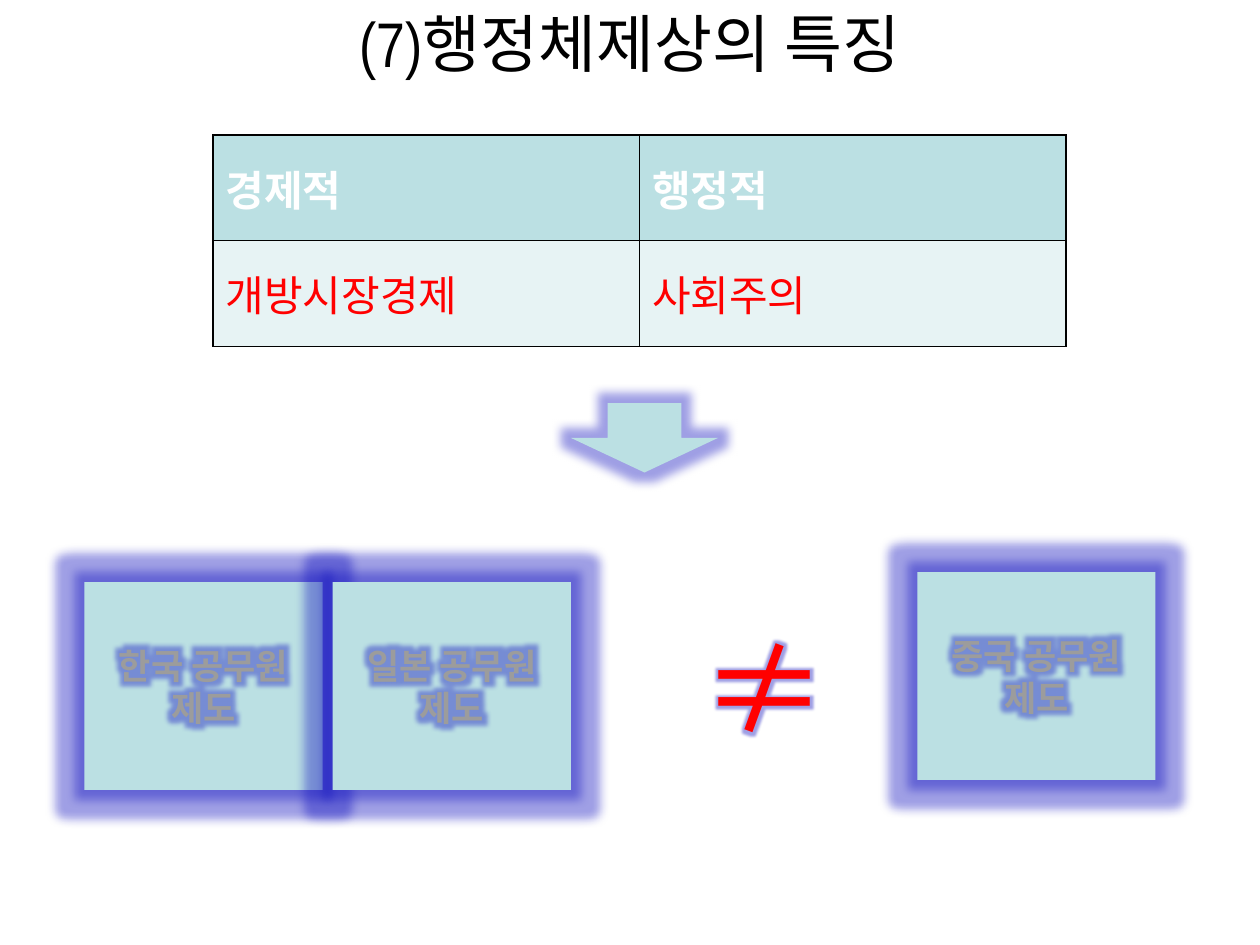
from dataclasses import dataclass

from lxml import etree
from pptx import Presentation
from pptx import util as u
from pptx.dml.color import RGBColor
from pptx.enum import shapes, text
from pptx.oxml import ns

SANS = "Noto Sans CJK KR"
PALE, RED, YELLOW, BLACK = "BBE0E3", "FF0000", "FFFF00", "000000"
GLOW = "0F0FBE"


@dataclass
class SystemBox:
    label: str
    left: float
    top: float


SYSTEMS = [
    SystemBox("한국 공무원 제도", 0.67, 4.62),
    SystemBox("일본 공무원 제도", 2.64, 4.62),
    SystemBox("중국 공무원 제도", 7.28, 4.54),
]
HEADINGS = ["경제적", "행정적"]
FEATURES = ["개방시장경제", "사회주의"]


def rgb(value: str) -> RGBColor:
    return RGBColor.from_string(value)


def child(parent, tag: str, **attributes):
    return etree.SubElement(parent, ns.qn(tag), attributes)


def add_solid(parent, color: str):
    return child(child(parent, "a:solidFill"), "a:srgbClr", val=color)


def add_line(parent, tag: str, color: str, points: float):
    line = child(parent, tag, w=str(int(u.Pt(points))))
    add_solid(line, color)
    return line


def glow_effect(parent, points: float):
    effects = child(parent, "a:effectLst")
    color = child(child(effects, "a:glow", rad=str(int(u.Pt(points)))), "a:srgbClr", val=GLOW)
    child(color, "a:alpha", val="40000")
    return effects


def write(frame, content: str, size: float, color: str, bold=False, font=SANS,
          align=None, outline=None, glow=0.0) -> None:
    frame.vertical_anchor = text.MSO_ANCHOR.MIDDLE
    paragraph = frame.paragraphs[0]
    paragraph.alignment = align
    run = paragraph.add_run()
    run.text = content
    for name, value in {"size": u.Pt(size), "bold": bold, "name": font}.items():
        setattr(run.font, name, value)
    run.font.color.rgb = rgb(color)
    properties = run.font._element
    child(properties, "a:ea", typeface=SANS)
    if outline:
        properties.insert(0, add_line(properties, "a:ln", *outline))
    if glow:
        fill = properties.find(ns.qn("a:solidFill"))
        fill.addnext(glow_effect(properties, glow))


def add_block(slide, preset, left: float, top: float, width: float, height: float):
    block = slide.shapes.add_shape(preset, *map(u.Inches, (left, top, width, height)))
    block.fill.solid()
    block.fill.fore_color.rgb = rgb(PALE)
    block.line.fill.background()
    glow_effect(block._element.spPr, 11)
    return block


def add_title(slide) -> None:
    title = slide.shapes.title
    place = {"left": 0, "top": 0, "width": 10, "height": 0.67}
    for name, value in place.items():
        setattr(title, name, u.Inches(value))
    write(title.text_frame, "(7)행정체제상의 특징", 36, BLACK, font="Arial Narrow",
          align=text.PP_ALIGN.CENTER)


def format_cell(cell, fill: str) -> None:
    cell.vertical_anchor = text.MSO_ANCHOR.MIDDLE
    properties = cell._tc.get_or_add_tcPr()
    for side in ("a:lnL", "a:lnR", "a:lnT", "a:lnB"):
        add_line(properties, side, BLACK, 1)
    cell.fill.solid()
    cell.fill.fore_color.rgb = rgb(fill)


def add_features(slide) -> None:
    place = map(u.Inches, (1.69, 1.07, 6.77, 1.68))
    table = slide.shapes.add_table(2, len(HEADINGS), *place).table
    for column, (heading, feature) in enumerate(zip(HEADINGS, FEATURES)):
        head, body = table.cell(0, column), table.cell(1, column)
        format_cell(head, PALE)
        format_cell(body, "E7F3F4")
        write(head.text_frame, heading, 24, "FFFFFF", bold=True)
        outline = (YELLOW, 0.75) if feature == "사회주의" else None
        write(body.text_frame, feature, 24, RED, outline=outline)
        for cell in (head, body):
            cell.vertical_anchor = text.MSO_ANCHOR.MIDDLE


def add_system(slide, system: SystemBox) -> None:
    box = add_block(slide, shapes.MSO_SHAPE.RECTANGLE, system.left, system.top, 1.89, 1.65)
    box.text_frame.word_wrap = True
    write(box.text_frame, system.label, 20, "9C9C9C", bold=True,
          align=text.PP_ALIGN.CENTER, outline=(BLACK, 1), glow=18)


def add_inequality(slide) -> None:
    sign = slide.shapes.add_textbox(*map(u.Inches, (5.47, 4.93, 1.02, 1.02)))
    sign.text_frame.word_wrap = True
    write(sign.text_frame, "≠", 72, RED, outline=(YELLOW, 0.75), glow=5)


def main() -> None:
    deck = Presentation()
    deck.slide_width, deck.slide_height = u.Inches(10), u.Inches(7.5)
    slide = deck.slides.add_slide(deck.slide_layouts[5])
    add_title(slide)
    add_features(slide)
    arrow = add_block(slide, shapes.MSO_SHAPE.RIGHT_ARROW, 4.84, 2.89, 0.55, 1.17)
    arrow.rotation = 90
    for system in SYSTEMS:
        add_system(slide, system)
    add_inequality(slide)
    deck.save("out.pptx")


if __name__ == "__main__":
    main()
